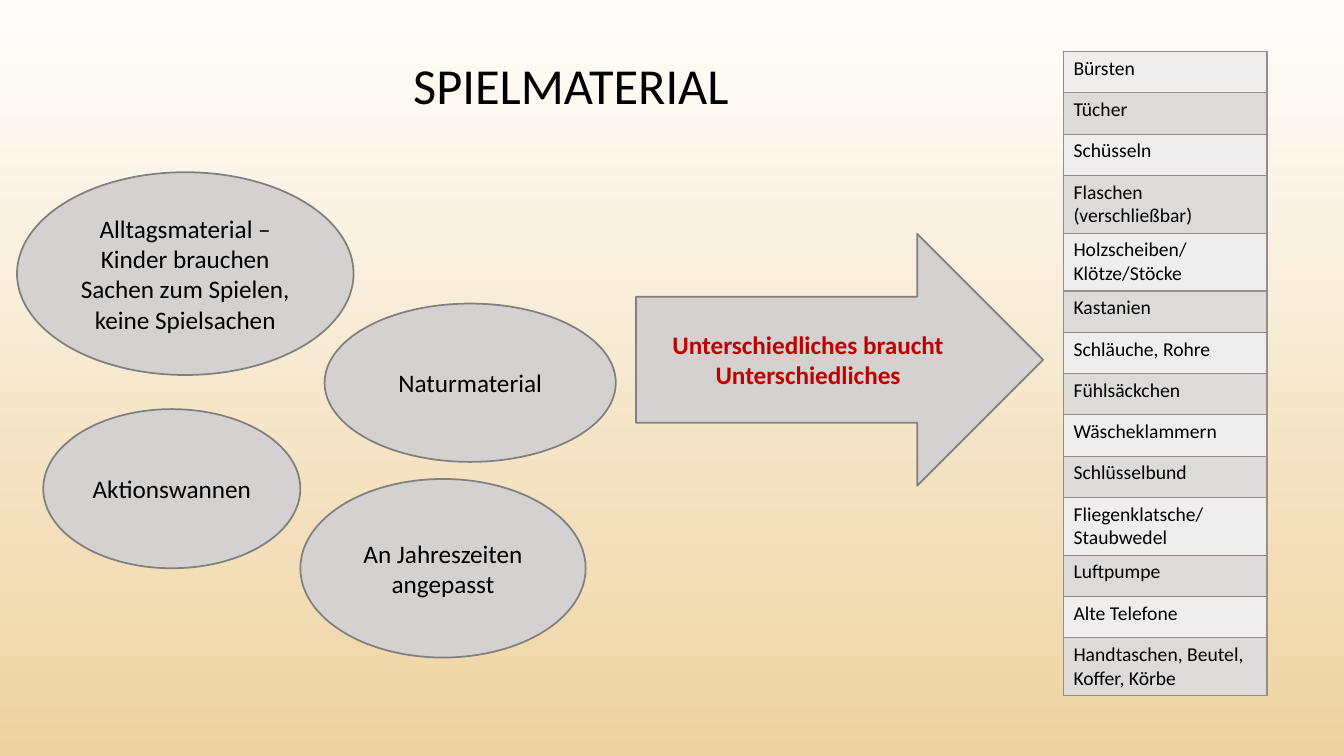
from lxml.etree import SubElement
from pptx import Presentation
from pptx.dml.color import RGBColor
from pptx.enum.shapes import MSO_SHAPE as Shape
from pptx.enum.text import MSO_ANCHOR as Anchor, MSO_AUTO_SIZE as AutoSize, PP_ALIGN as Align
from pptx.oxml.ns import qn
from pptx.util import Cm, Pt

FONT = "Calibri"
BLACK, RED = "000000", "C00000"
SHAPE_FILL, SHAPE_LINE = "D5D1D1", "808080"
ROW_FILLS, TABLE_LINE = ("EFEEEE", "DDDADA"), "968C8C"

IDEAS = [
    ("Alltagsmaterial – Kinder brauchen Sachen zum Spielen, keine Spielsachen",
     (0.43, 4.34, 8.48, 5.11)),
    ("An Jahreszeiten angepasst", (7.57, 12.07, 7.19, 4.5)),
    ("Aktionswannen", (1.09, 10.31, 6.48, 4.01)),
    ("Naturmaterial", (8.18, 7.65, 7.34, 3.99)),
]
MATERIALS = [
    "Bürsten", "Tücher", "Schüsseln", "Flaschen (verschließbar)",
    "Holzscheiben/ Klötze/Stöcke", "Kastanien", "Schläuche, Rohre",
    "Fühlsäckchen", "Wäscheklammern", "Schlüsselbund",
    "Fliegenklatsche/ Staubwedel", "Luftpumpe", "Alte Telefone",
    "Handtaschen, Beutel, Koffer, Körbe",
]


def colour(value):
    """Return the colour for a hex string."""
    return RGBColor.from_string(value)


def write(frame, text, size, align=Align.CENTER, tint=BLACK, bold=False):
    """Write one formatted paragraph into a text frame and return it."""
    para = frame.paragraphs[0]
    para.alignment = align
    span = para.add_run()
    span.text = text
    span.font.name = FONT
    span.font.size = Pt(size)
    span.font.bold = bold
    span.font.color.rgb = colour(tint)
    return para


def paint_background(page):
    """Fill the page with a vertical gradient."""
    fill = page.background.fill
    fill.gradient()
    fill.gradient_angle = 270
    for stop, tint in zip(fill.gradient_stops, ("FFFEFC", "EED3A1")):
        stop.color.rgb = colour(tint)


def add_title(page, text, box):
    """Place and format the title placeholder in the box."""
    title = page.shapes.title
    title.left, title.top, title.width, title.height = map(Cm, box)
    frame = title.text_frame
    frame.auto_size = AutoSize.NONE
    frame.vertical_anchor = Anchor.MIDDLE
    write(frame, text, 36).line_spacing = 0.9


def add_figure(page, kind, text, box, tint=BLACK, bold=False):
    """Add a grey outlined shape with centred text in the box."""
    figure = page.shapes.add_shape(kind, *map(Cm, box))
    figure.shadow.inherit = False
    figure.fill.solid()
    figure.fill.fore_color.rgb = colour(SHAPE_FILL)
    figure.line.color.rgb = colour(SHAPE_LINE)
    figure.line.width = Pt(1.25)
    frame = figure.text_frame
    frame.word_wrap = True
    frame.vertical_anchor = Anchor.MIDDLE
    write(frame, text, 18, tint=tint, bold=bold)


def add_borders(cell):
    """Draw a thin line on all four sides of a cell."""
    props = cell._tc.get_or_add_tcPr()
    for index, side in enumerate(("lnL", "lnR", "lnT", "lnB")):
        line = SubElement(props, qn(f"a:{side}"), w=str(Pt(1)))
        fill = SubElement(line, qn("a:solidFill"))
        SubElement(fill, qn("a:srgbClr"), val=TABLE_LINE)
        props.insert(index, line)


def add_materials(page, items, box):
    """Add a one-column table of items with alternating row fills."""
    table = page.shapes.add_table(len(items), 1, *map(Cm, box)).table
    table.first_row = False
    for index, item in enumerate(items):
        cell = table.cell(index, 0)
        cell.fill.solid()
        cell.fill.fore_color.rgb = colour(ROW_FILLS[index % 2])
        add_borders(cell)
        write(cell.text_frame, item, 14, Align.LEFT)


def main():
    """Build the slide and save the deck."""
    deck = Presentation()
    deck.slide_width, deck.slide_height = Cm(33.87), Cm(19.05)
    page = deck.slides.add_slide(deck.slide_layouts[5])
    paint_background(page)
    add_title(page, "SPIELMATERIAL", (0, 0, 28.78, 4.45))
    for text, box in IDEAS:
        add_figure(page, Shape.OVAL, text, box)
    add_materials(page, MATERIALS, (26.8, 1.3, 5.13, 1.04 * len(MATERIALS)))
    add_figure(page, Shape.RIGHT_ARROW, "Unterschiedliches braucht Unterschiedliches",
               (16.03, 5.89, 10.26, 6.35), RED, True)
    deck.save("out.pptx")


if __name__ == "__main__":
    main()
